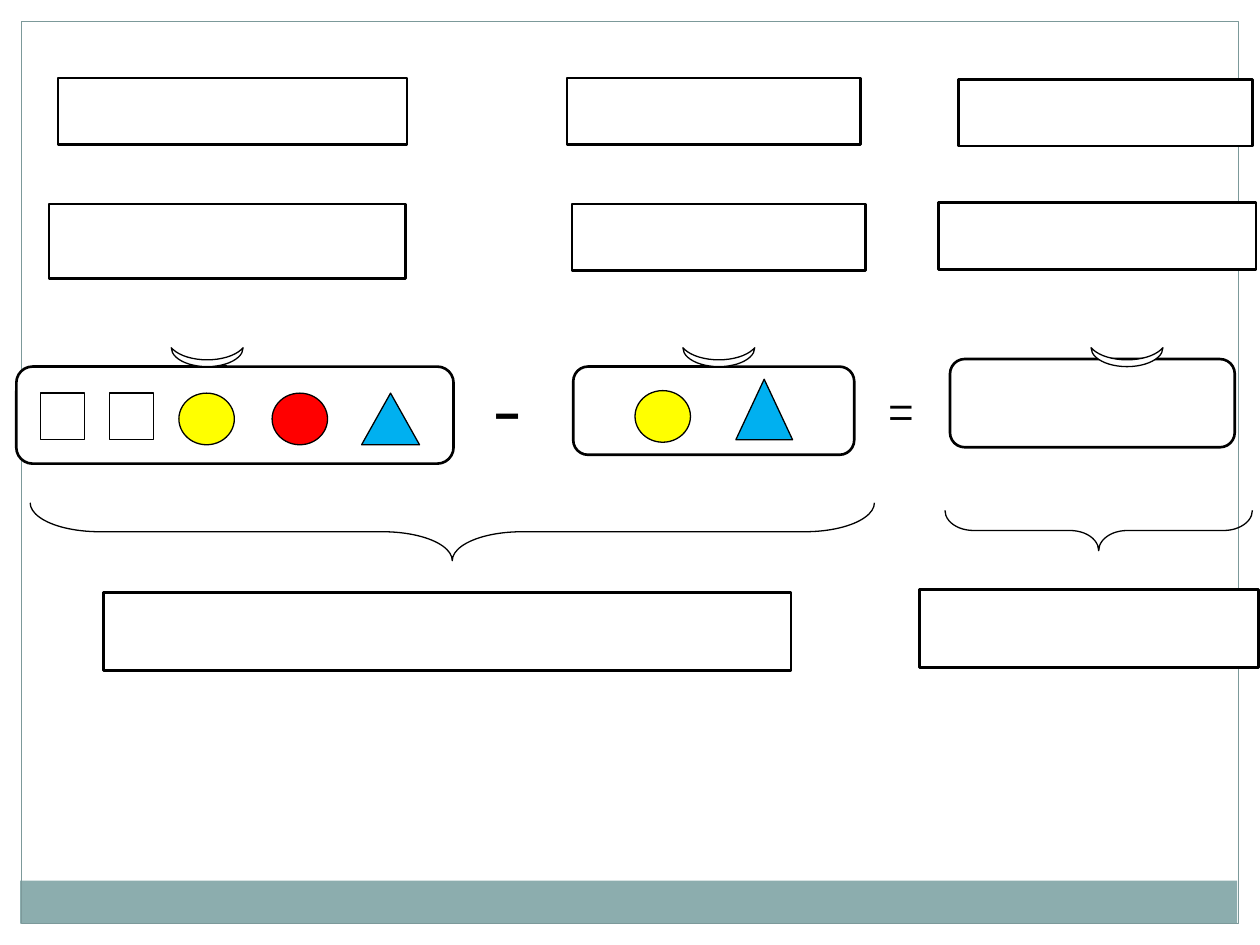
from pptx import Presentation
from pptx import util as u
from pptx.dml.color import RGBColor
from pptx.enum import shapes, text

KIND = shapes.MSO_SHAPE
BLACK, WHITE = "000000", "FFFFFF"
YELLOW, RED, BLUE = "FFFF00", "FF0000", "00B0F0"
BAND, FRAME = "8CADAE", "7C999A"
THICK, THIN = 1.5, 0.75


def color(value):
    return RGBColor.from_string(value)


def add_figure(page, kind, place, fill=WHITE, line=BLACK, width=THIN,
               turn=0, adjust=()):
    """Add a preset shape; a fill or line of None is left out."""
    figure = page.shapes.add_shape(kind, *(u.Inches(n) for n in place))
    figure.shadow.inherit = False
    figure.rotation = turn
    for index, value in enumerate(adjust):
        figure.adjustments[index] = value
    if fill:
        figure.fill.solid()
        figure.fill.fore_color.rgb = color(fill)
    else:
        figure.fill.background()
    if line:
        figure.line.color.rgb = color(line)
        figure.line.width = u.Pt(width)
    else:
        figure.line.fill.background()
    return figure


def add_frame(page):
    add_figure(page, KIND.RECTANGLE, (0.16, 6.99, 9.66, 0.34), BAND, None)
    add_figure(page, KIND.RECTANGLE, (0.17, 0.17, 9.66, 7.16), None, FRAME)


def add_bag(page, place, handle_center):
    """A rounded bag with a crescent handle on its top edge."""
    add_figure(page, KIND.ROUNDED_RECTANGLE, place, width=THICK,
               adjust=[0.167])
    add_figure(page, KIND.MOON, (handle_center - 0.07, 2.55, 0.15, 0.57),
               turn=270, adjust=[0.36])


def add_operator(page, sign, place, size):
    box = page.shapes.add_textbox(*(u.Inches(n) for n in place))
    box.fill.solid()
    box.fill.fore_color.rgb = color(WHITE)
    frame = box.text_frame
    frame.word_wrap = True
    frame.vertical_anchor = text.MSO_ANCHOR.TOP
    frame.text = sign
    font = frame.paragraphs[0].runs[0].font
    font.name = "Montserrat"
    font.size = u.Pt(size)
    font.color.rgb = color(BLACK)


def add_brace(page, place, curve):
    add_figure(page, KIND.LEFT_BRACE, place, fill=None, turn=270,
               adjust=[curve, 0.5])


def main():
    deck = Presentation()
    deck.slide_width, deck.slide_height = u.Inches(10), u.Inches(7.5)
    page = deck.slides.add_slide(deck.slide_layouts[6])
    add_frame(page)

    # Bags and the signs between them
    add_bag(page, (7.54, 2.85, 2.26, 0.7), 8.94)
    add_bag(page, (0.13, 2.91, 3.47, 0.77), 1.64)
    add_bag(page, (4.55, 2.91, 2.23, 0.7), 5.7)
    add_operator(page, "-", (3.8, 2.77, 0.42, 1.03), 48)
    add_operator(page, "=", (6.94, 2.98, 0.51, 0.52), 28)

    # Objects in the bags
    for left in (0.32, 0.87):
        add_figure(page, KIND.RECTANGLE, (left, 3.12, 0.35, 0.37))
    for left, top, fill in ((1.42, 3.12, YELLOW), (2.16, 3.12, RED),
                            (5.04, 3.1, YELLOW)):
        add_figure(page, KIND.OVAL, (left, top, 0.44, 0.41), fill)
    for place in ((2.87, 3.12, 0.46, 0.41), (5.84, 3.01, 0.45, 0.48)):
        add_figure(page, KIND.ISOSCELES_TRIANGLE, place, BLUE)

    # Empty answer boxes: two rows above the bags, one below
    answers = (
        (0.46, 0.62, 2.77, 0.53), (4.5, 0.62, 2.33, 0.53),
        (7.61, 0.63, 2.33, 0.53),
        (0.39, 1.62, 2.83, 0.59), (4.54, 1.62, 2.33, 0.53),
        (7.45, 1.61, 2.52, 0.53),
        (0.82, 4.7, 5.46, 0.62), (7.3, 4.68, 2.69, 0.62),
    )
    for place in answers:
        add_figure(page, KIND.RECTANGLE, place, width=THICK)

    # Braces under both sides of the equation
    add_brace(page, (3.36, 0.87, 0.46, 6.7), 1.2)
    add_brace(page, (8.56, 2.99, 0.32, 2.44), 0.71)

    deck.save("out.pptx")


if __name__ == "__main__":
    main()
